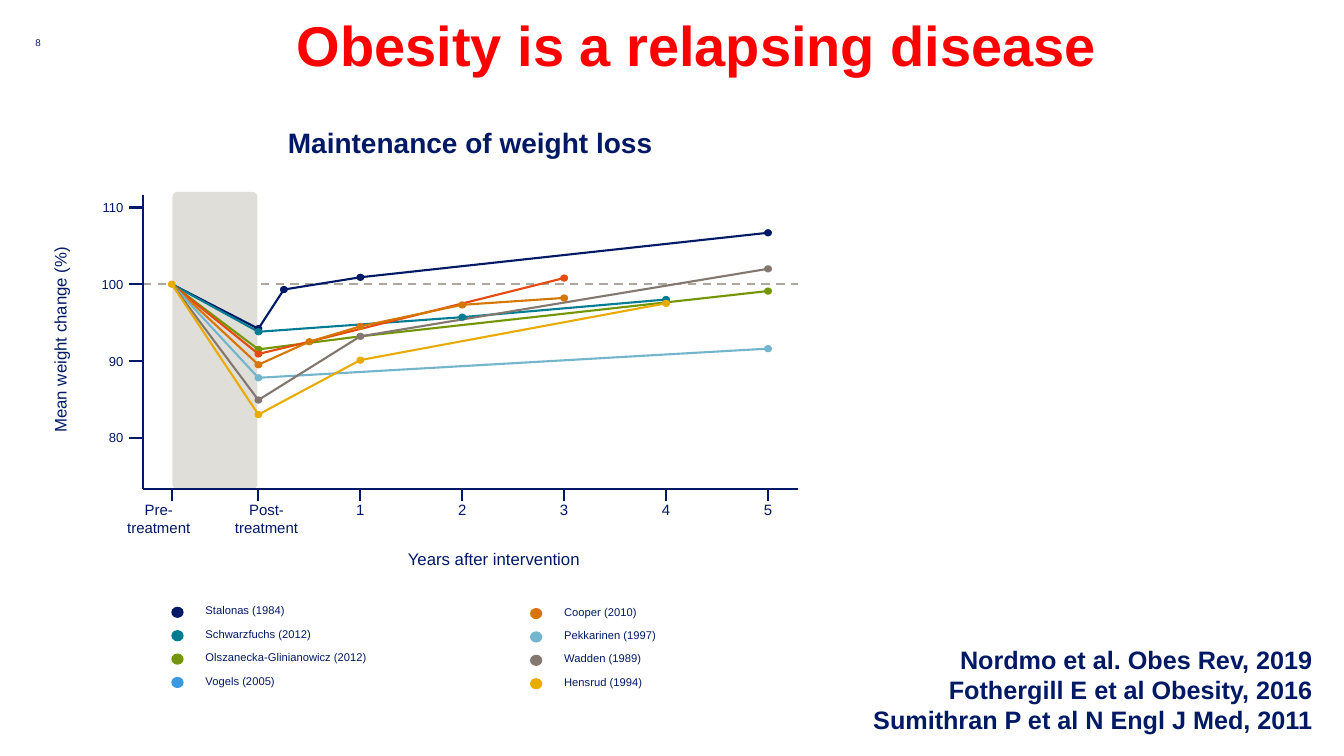
from dataclasses import dataclass

from lxml import etree
from pptx import Presentation
from pptx.dml.color import RGBColor
from pptx.enum.dml import MSO_LINE
from pptx.enum.shapes import MSO_CONNECTOR, MSO_SHAPE
from pptx.enum.text import MSO_ANCHOR, PP_ALIGN
from pptx.oxml.ns import qn
from pptx.util import Pt

LEFT, CENTER, RIGHT = PP_ALIGN.LEFT, PP_ALIGN.CENTER, PP_ALIGN.RIGHT
TOP, MIDDLE = MSO_ANCHOR.TOP, MSO_ANCHOR.MIDDLE
STRAIGHT = MSO_CONNECTOR.STRAIGHT
OVAL, ROUNDED = MSO_SHAPE.OVAL, MSO_SHAPE.ROUNDED_RECTANGLE
DASH = MSO_LINE.DASH


@dataclass(frozen=True)
class Theme:
    font: str = "Arial"
    navy: str = "001965"
    red: str = "FF0000"
    band: str = "E0DED8"
    baseline: str = "AEA79F"
    teal: str = "007C92"
    green: str = "739600"
    blue: str = "3B97DE"
    vermilion: str = "E64A0E"
    orange: str = "D47600"
    sky: str = "72B5CC"
    taupe: str = "82786F"
    gold: str = "EAAB00"
    title: float = 40
    heading: float = 20
    sources: float = 18
    axis_title: float = 12
    time_label: float = 10.7
    weight_label: float = 9.3
    legend: float = 8
    page: float = 7
    line: float = 1.5


theme = Theme()
prs = Presentation()
prs.slide_width, prs.slide_height = Pt(960), Pt(540)
slide = prs.slides.add_slide(prs.slide_layouts[6])
shapes = slide.shapes


def add_text(text, left, top, width, height, *, size, color=theme.navy, bold=False,
             align=LEFT, anchor=TOP, inset=True, wrap=True, rotation=0, spacing=None):
    """Each line of text becomes a paragraph; a vertical tab breaks a line within one."""
    box = shapes.add_textbox(Pt(left), Pt(top), Pt(width), Pt(height))
    box.rotation = rotation
    frame = box.text_frame
    frame.word_wrap = wrap
    frame.vertical_anchor = anchor
    if not inset:
        frame.margin_left = frame.margin_right = frame.margin_top = frame.margin_bottom = 0
    frame.text = text
    for paragraph in frame.paragraphs:
        paragraph.alignment = align
        if spacing:
            paragraph.line_spacing = spacing
        for run in paragraph.runs:
            run.font.name = theme.font
            run.font.size = Pt(size)
            run.font.bold = bold
            run.font.color.rgb = RGBColor.from_string(color)


def add_line(x1, y1, x2, y2, color=theme.navy, dash=None):
    connector = shapes.add_connector(STRAIGHT, Pt(x1), Pt(y1), Pt(x2), Pt(y2))
    connector.line.color.rgb = RGBColor.from_string(color)
    connector.line.width = Pt(theme.line)
    if dash:
        connector.line.dash_style = dash
    etree.SubElement(connector._element.spPr, qn("a:effectLst"))


# Scales: years after treatment run across, percent of starting weight runs up
PRE, POST = -0.85, 0
AXIS_X, AXIS_Y, AXIS_TOP, AXIS_RIGHT = 102.2, 349.2, 139, 570
YEAR_ZERO_X, YEAR_STEP = 184.6, 72.8
WEIGHT_100_Y, PERCENT_STEP = 203, 5.48

studies = [
    (theme.navy, [(POST, 94.2), (0.25, 99.3), (1, 100.9), (5, 106.7)]),
    (theme.teal, [(POST, 93.8), (2, 95.7), (4, 98)]),
    (theme.green, [(POST, 91.5), (1, 93.2), (5, 99.1)]),
    (theme.vermilion, [(POST, 90.9), (0.5, 92.5), (3, 100.8)]),
    (theme.orange, [(POST, 89.5), (0.5, 92.5), (1, 94.5), (2, 97.3), (3, 98.2)]),
    (theme.sky, [(POST, 87.8), (5, 91.6)]),
    (theme.taupe, [(POST, 84.9), (1, 93.2), (5, 102)]),
    (theme.gold, [(POST, 83), (1, 90.1), (4, 97.5)]),
]
legend_columns = [
    (126.8, 437.4, [("Stalonas (1984)", theme.navy), ("Schwarzfuchs (2012)", theme.teal),
                    ("Olszanecka-Glinianowicz (2012)", theme.green), ("Vogels (2005)", theme.blue)]),
    (383, 438.3, [("Cooper (2010)", theme.orange), ("Pekkarinen (1997)", theme.sky),
                  ("Wadden (1989)", theme.taupe), ("Hensrud (1994)", theme.gold)]),
]
LEGEND_STEP = 16.7

add_text("Obesity is a relapsing disease", 68.4, 5.8, 858.2, 57.6, size=theme.title,
         color=theme.red, bold=True, align=CENTER, anchor=MIDDLE, inset=False, spacing=0.9)

# Plot background and axes
add_line(AXIS_X, WEIGHT_100_Y, AXIS_RIGHT, WEIGHT_100_Y, theme.baseline, DASH)
treatment = shapes.add_shape(ROUNDED, Pt(123.1), Pt(137), Pt(60.8), Pt(212.4))
treatment.adjustments[0] = 0.06
treatment.shadow.inherit = False
treatment.fill.solid()
treatment.fill.fore_color.rgb = RGBColor.from_string(theme.band)
treatment.line.fill.background()
add_line(AXIS_X, AXIS_TOP, AXIS_X, AXIS_Y)
add_line(AXIS_X, AXIS_Y, AXIS_RIGHT, AXIS_Y)

for percent in range(80, 111, 10):
    y = WEIGHT_100_Y - (percent - 100) * PERCENT_STEP
    add_line(AXIS_X, y, AXIS_X - 10, y)
    add_text(str(percent), 46.1, y - 9.2, 49, 20.9, size=theme.weight_label, align=RIGHT)

time_labels = [(PRE, "Pre-\vtreatment", -9.3), (POST, "Post-\vtreatment", 5.8)]
time_labels += [(year, str(year), 0) for year in range(1, 6)]
for year, label, shift in time_labels:
    x = YEAR_ZERO_X + year * YEAR_STEP
    add_line(x, AXIS_Y, x, AXIS_Y + 8.6)
    add_text(label, x + shift - 46.4, 353.9, 92.8, 37.4, size=theme.time_label, align=CENTER)

# Study lines; where studies share a point, the last one colours its marker
markers = {}
for color, results in studies:
    points = [(YEAR_ZERO_X + year * YEAR_STEP, WEIGHT_100_Y - (percent - 100) * PERCENT_STEP)
              for year, percent in [(PRE, 100)] + results]
    corners = [(Pt(x), Pt(y)) for x, y in points]
    builder = shapes.build_freeform(*corners[0])
    builder.add_line_segments(corners[1:], close=False)
    course = builder.convert_to_shape()
    course.shadow.inherit = False
    course.fill.background()
    course.line.color.rgb = RGBColor.from_string(color)
    course.line.width = Pt(theme.line)
    markers.update((point, color) for point in points)

dots = [(x, y, 5.6, 5.2, color) for (x, y), color in markers.items()]
for x, first_y, entries in legend_columns:
    for row, (study, color) in enumerate(entries):
        y = first_y + row * LEGEND_STEP
        dots.append((x, y, 8.8, 8, color))
        add_text(study, x + 12.9, y - 9.7, 188, 19.4, size=theme.legend)

for x, y, width, height, color in dots:
    dot = shapes.add_shape(OVAL, Pt(x - width / 2), Pt(y - height / 2), Pt(width), Pt(height))
    dot.shadow.inherit = False
    dot.fill.solid()
    dot.fill.fore_color.rgb = RGBColor.from_string(color)
    dot.line.fill.background()

add_text("Years after intervention", 218.9, 388.1, 267.8, 24.5, size=theme.axis_title, align=CENTER)
add_text("Mean weight change (%)", -67, 229, 225.4, 27.4, size=theme.axis_title,
         align=CENTER, rotation=270)
add_text("Maintenance of weight loss", 160.6, 86.4, 350.6, 36, size=theme.heading,
         bold=True, align=CENTER, wrap=False)
add_text("8", 25.2, 25.2, 25.2, 10.1, size=theme.page, anchor=MIDDLE, inset=False)
add_text("Nordmo et al. Obes Rev, 2019\nFothergill E et al Obesity, 2016\n"
         "Sumithran P et al N Engl J Med, 2011", 591.8, 456.5, 352.8, 72.7,
         size=theme.sources, bold=True, align=RIGHT)

prs.save("out.pptx")
